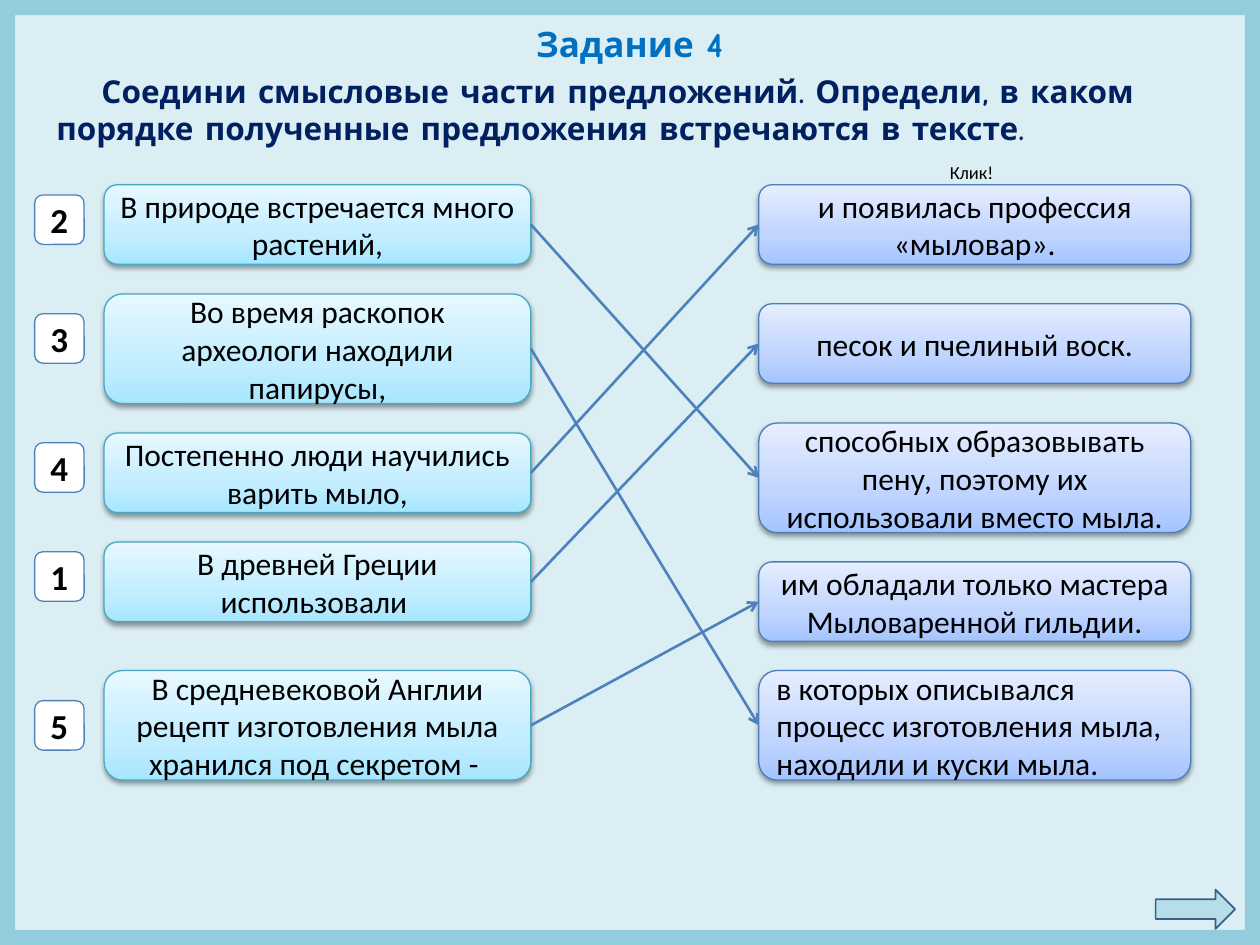
from dataclasses import dataclass

from lxml import etree
from pptx import Presentation
from pptx.dml.color import RGBColor
from pptx.enum import shapes, text
from pptx.oxml import ns
from pptx.util import Pt


@dataclass(frozen=True)
class Theme:
    body_font: str = "Calibri"
    head_font: str = "Comic Neue"
    title_size: float = 20
    text_size: float = 18
    hint_size: float = 10.5
    ink: str = "000000"
    title: str = "0070C0"
    task: str = "002060"
    white: str = "FFFFFF"
    page: str = "DBEEF4"
    frame: str = "93CDDD"
    outline: str = "3A5F8C"
    accent: str = "4F81BD"
    arrow: str = "B7DEE8"
    start_line: str = "46AAC5"
    end_line: str = "4B7EBC"
    start_stops: tuple = ((0, "A7E6FF"), (35, "C1EDFF"), (100, "E7F8FF"))
    end_stops: tuple = ((0, "A4C4FF"), (35, "BFD4FF"), (100, "E6EEFF"))


THEME = Theme()
SHAPE = shapes.MSO_SHAPE
CENTER, LEFT = text.PP_ALIGN.CENTER, text.PP_ALIGN.LEFT
LOW, HIGH = 45.4, 62.6  # heights of two-line and three-line cards
BADGE = 28.3

# number, badge top, card top, card height, text, index of the matching ending
STARTS = [
    ("2", 111.4, 105.6, LOW, "В природе встречается много растений,", 2),
    ("3", 179.3, 168, HIGH, "Во время раскопок археологи находили папирусы,", 4),
    ("4", 253, 247.5, LOW, "Постепенно люди научились варить мыло,", 0),
    ("1", 315.3, 309.8, LOW, "В древней Греции использовали ", 1),
    ("5", 400.4, 383.2, HIGH,
     "В средневековой Англии рецепт изготовления мыла хранился под секретом - ", 3),
]
# card top, card height, text, alignment
ENDS = [
    (105.6, LOW, "и появилась профессия «мыловар».", CENTER),
    (173.6, LOW, "песок и пчелиный воск.", CENTER),
    (241.8, HIGH, "способных образовывать пену, поэтому их использовали вместо мыла.", CENTER),
    (321.1, LOW, "им обладали только мастера Мыловаренной гильдии.", CENTER),
    (383.2, HIGH,
     "в которых описывался процесс изготовления мыла, находили и куски мыла.", LEFT),
]


def color(value):
    return RGBColor.from_string(value)


def add_child(parent, tag, **attributes):
    child = etree.SubElement(parent, ns.qn(tag))
    for name, value in attributes.items():
        child.set(name, str(value))
    return child


def write(box, words, size, ink=THEME.ink, font=THEME.body_font, bold=False, align=CENTER):
    frame = box.text_frame
    frame.word_wrap = True
    frame.text = words
    para = frame.paragraphs[0]
    para.alignment = align
    span = para.runs[0].font
    span.name, span.size, span.bold = font, Pt(size), bold
    span.color.rgb = color(ink)
    return para


def add_label(page, left, top, width, height, words, size, **style):
    box = page.shapes.add_textbox(Pt(left), Pt(top), Pt(width), Pt(height))
    return write(box, words, size, **style)


def add_plain(page, kind, left, top, width, height, fill, line=None, weight=0.75):
    shape = page.shapes.add_shape(kind, Pt(left), Pt(top), Pt(width), Pt(height))
    shape.shadow.inherit = False
    shape.fill.solid()
    shape.fill.fore_color.rgb = color(fill)
    if line:
        shape.line.color.rgb = color(line)
        shape.line.width = Pt(weight)
    else:
        shape.line.fill.background()
    return shape


def add_card(page, left, top, width, height, words, stops, line, align=CENTER):
    """Rounded card with a vertical gradient and a soft shadow."""
    card = add_plain(page, SHAPE.ROUNDED_RECTANGLE, left, top, width, height,
                     stops[0][1], line)
    card.fill.gradient()
    card.fill.gradient_angle = 90
    properties = card._element.spPr
    stop_list = properties.find(".//" + ns.qn("a:gsLst"))
    for stop in list(stop_list):
        stop_list.remove(stop)
    for position, value in stops:
        add_child(add_child(stop_list, "a:gs", pos=position * 1000), "a:srgbClr", val=value)
    shadow = add_child(properties.find(ns.qn("a:effectLst")), "a:outerShdw",
                       blurRad=Pt(3.1), dist=Pt(1.6), dir=5400000, rotWithShape=0)
    add_child(add_child(shadow, "a:srgbClr", val=THEME.ink), "a:alpha", val=38000)
    write(card, words, THEME.text_size, align=align)
    return card


def add_badge(page, top, number):
    badge = add_plain(page, SHAPE.ROUNDED_RECTANGLE, 19.8, top, BADGE, BADGE,
                      THEME.white, THEME.accent)
    write(badge, number, THEME.title_size, bold=True)


def add_link(page, start, end):
    """Arrow from the right side of one card to the left side of another."""
    link = page.shapes.add_connector(shapes.MSO_CONNECTOR.STRAIGHT, 0, 0, 0, 0)
    link.begin_connect(start, 3)
    link.end_connect(end, 1)
    link.line.color.rgb = color(THEME.accent)
    link.line.width = Pt(1.5)
    add_child(link.line._get_or_add_ln(), "a:tailEnd", type="arrow")
    add_child(link._element.spPr, "a:effectLst")


def add_background(page):
    add_plain(page, SHAPE.RECTANGLE, 0, 0, 720, 540, THEME.page, THEME.outline, 2)
    frame = add_plain(page, SHAPE.FRAME, 0, 0, 720, 540, THEME.frame)
    frame.adjustments[0] = 0.016


def add_headings(page):
    add_label(page, 297.4, 9.4, 124.6, 31.5, "Задание 4", THEME.title_size,
              ink=THEME.title, font=THEME.head_font, bold=True)
    task = add_label(
        page, 25.2, 37.4, 652.3, 51,
        "Соедини смысловые части предложений. Определи, в каком порядке "
        "полученные предложения встречаются в тексте.",
        THEME.text_size, ink=THEME.task, font=THEME.head_font, bold=True, align=LEFT)
    task._p.get_or_add_pPr().set("indent", str(Pt(25.7)))
    add_label(page, 535.7, 88.6, 45.4, 20.9, "Клик!", THEME.hint_size, align=LEFT)


def main():
    deck = Presentation()
    deck.slide_width, deck.slide_height = Pt(720), Pt(540)
    page = deck.slides.add_slide(deck.slide_layouts[6])
    add_background(page)
    add_headings(page)
    endings = [
        add_card(page, 433.6, top, 246.8, height, words,
                 THEME.end_stops, THEME.end_line, align)
        for top, height, words, align in ENDS
    ]
    for number, badge_top, top, height, words, match in STARTS:
        add_badge(page, badge_top, number)
        start = add_card(page, 59.5, top, 243.9, height, words,
                         THEME.start_stops, THEME.start_line)
        add_link(page, start, endings[match])
    add_plain(page, SHAPE.RIGHT_ARROW, 660.4, 508.3, 45.4, 22.5,
              THEME.arrow, THEME.outline, 1)
    deck.save("out.pptx")


if __name__ == "__main__":
    main()
